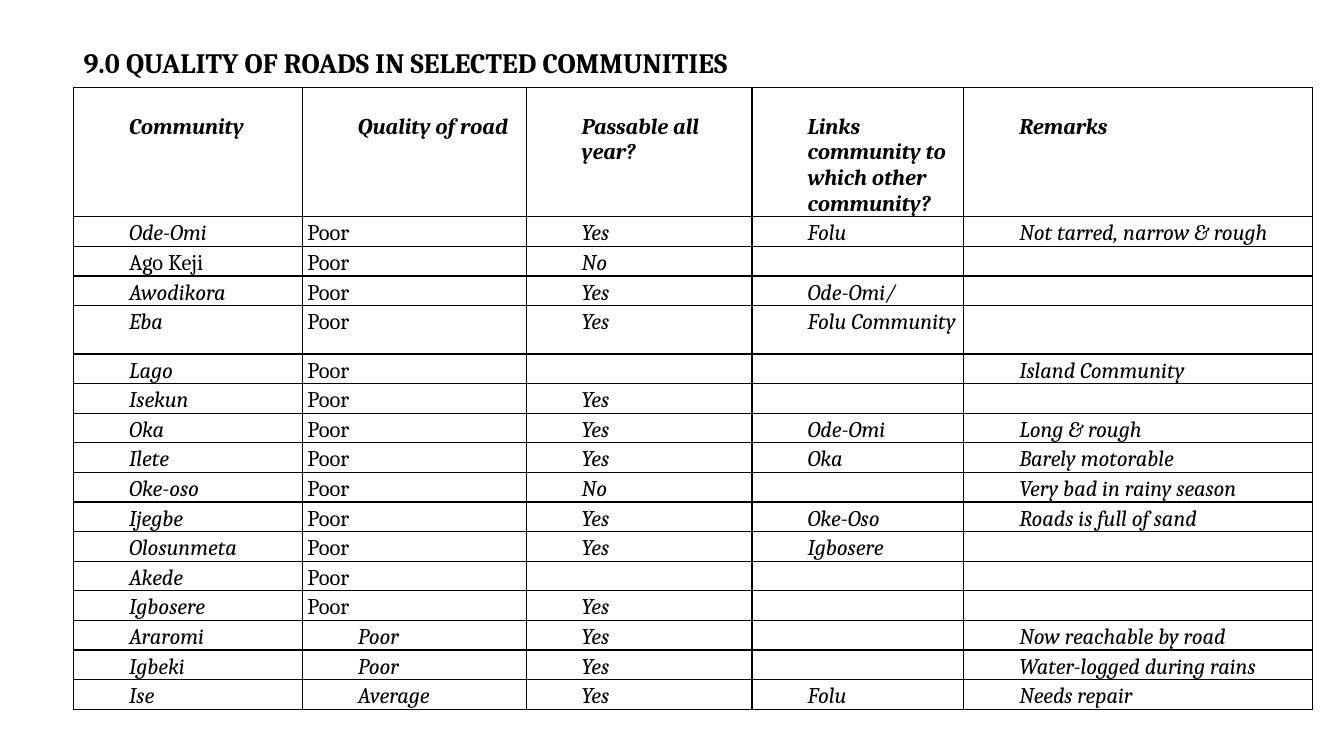
from dataclasses import dataclass

from lxml.etree import SubElement
from pptx import Presentation
from pptx.dml.color import RGBColor
from pptx.enum.text import MSO_ANCHOR
from pptx.oxml.ns import qn
from pptx.util import Inches, Pt


@dataclass(frozen=True)
class Theme:
    font: str = "Cambria"
    ink: str = "000000"
    title_size: int = 20
    table_size: int = 16
    border: float = 1
    line_spacing: float = 1.15
    indent: float = 0.5
    cell_margin: float = 0.05
    header_gap: float = 0.26


HEADERS = ["Community", "Quality of road", "Passable all year?",
           "Links community to which other community?", "Remarks"]
ROADS = [
    ["Ode-Omi", "Poor", "Yes", "Folu", "Not tarred, narrow & rough"],
    ["Ago Keji", "Poor", "No", "", ""],
    ["Awodikora", "Poor", "Yes", "Ode-Omi/", ""],
    ["Eba", "Poor", "Yes", "Folu Community", ""],
    ["Lago", "Poor", "", "", "Island Community"],
    ["Isekun", "Poor", "Yes", "", ""],
    ["Oka", "Poor", "Yes", "Ode-Omi", "Long & rough"],
    ["Ilete", "Poor", "Yes", "Oka", "Barely motorable"],
    ["Oke-oso", "Poor", "No", "", "Very bad in rainy season"],
    ["Ijegbe", "Poor", "Yes", "Oke-Oso", "Roads is full of sand"],
    ["Olosunmeta", "Poor", "Yes", "Igbosere", ""],
    ["Akede", "Poor", "", "", ""],
    ["Igbosere", "Poor", "Yes", "", ""],
    ["Araromi", "Poor", "Yes", "", "Now reachable by road"],
    ["Igbeki", "Poor", "Yes", "", "Water-logged during rains"],
    ["Ise", "Average", "Yes", "Folu", "Needs repair"],
]
COL_WIDTHS = [2.27, 2.22, 2.24, 2.1, 3.46]
HEADER_HEIGHT, ROW_HEIGHT = 1.28, 0.29
TALL_ROWS = {"Eba": 0.48}
QUALITY_COL = 1
FIRST_INDENTED_QUALITY = 14  # table row of Araromi


class SlideBuilder:
    def __init__(self, prs, theme):
        self.theme = theme
        self.slide = prs.slides.add_slide(prs.slide_layouts[6])

    def run(self, p, text, size, bold=False, italic=False):
        r = p.add_run()
        r.text = text
        r.font.name = self.theme.font
        r.font.size = Pt(size)
        r.font.bold = bold
        r.font.italic = italic
        r.font.color.rgb = RGBColor.from_string(self.theme.ink)

    def title(self, text, left, top, width, height):
        sp = self.slide.shapes.add_textbox(
            Inches(left), Inches(top), Inches(width), Inches(height))
        tf = sp.text_frame
        tf.word_wrap = True
        tf.vertical_anchor = MSO_ANCHOR.MIDDLE
        self.run(tf.paragraphs[0], text, self.theme.title_size, bold=True)

    def borders(self, cell):
        tcPr = cell._tc.get_or_add_tcPr()
        for side in ("lnL", "lnR", "lnT", "lnB"):
            ln = SubElement(tcPr, qn(f"a:{side}"), w=str(Pt(self.theme.border)))
            fill = SubElement(ln, qn("a:solidFill"))
            SubElement(fill, qn("a:srgbClr"), val=self.theme.ink)

    def cell(self, cell, text, header, indented, italic):
        theme = self.theme
        self.borders(cell)
        cell.fill.background()
        cell.margin_left = cell.margin_right = Inches(theme.cell_margin)
        cell.margin_top = Inches(theme.header_gap if header else 0)
        cell.margin_bottom = 0
        p = cell.text_frame.paragraphs[0]
        if not header:
            p.line_spacing = theme.line_spacing
        if not text:
            # keeps an empty cell from stretching its row
            SubElement(p._p, qn("a:endParaRPr"), sz=str(theme.table_size * 100))
            return
        if indented:
            pPr = p._p.get_or_add_pPr()
            pPr.set("marL", str(Inches(theme.indent)))
            pPr.set("indent", "0")
        self.run(p, text, theme.table_size, bold=header, italic=italic)

    def table(self, rows, left, top):
        heights = [HEADER_HEIGHT] + [TALL_ROWS.get(row[0], ROW_HEIGHT) for row in rows[1:]]
        frame = self.slide.shapes.add_table(
            len(rows), len(COL_WIDTHS), Inches(left), Inches(top),
            Inches(sum(COL_WIDTHS)), Inches(sum(heights)))
        table = frame.table
        table.first_row = table.horz_banding = False
        for col, width in zip(table.columns, COL_WIDTHS):
            col.width = Inches(width)
        for i, (row, height) in enumerate(zip(rows, heights)):
            table.rows[i].height = Inches(height)
            for j, text in enumerate(row):
                flush = j == QUALITY_COL and 0 < i < FIRST_INDENTED_QUALITY
                self.cell(table.cell(i, j), text, header=i == 0, indented=not flush,
                          italic=not flush and text != "Ago Keji")


def main():
    prs = Presentation()
    prs.slide_width, prs.slide_height = Inches(13.33), Inches(7.5)
    s = SlideBuilder(prs, Theme())
    s.table([HEADERS] + ROADS, 0.73, 0.87)
    s.title("9.0 QUALITY OF ROADS IN SELECTED COMMUNITIES", 0.73, 0.4, 12.29, 0.44)
    prs.save("out.pptx")


if __name__ == "__main__":
    main()
